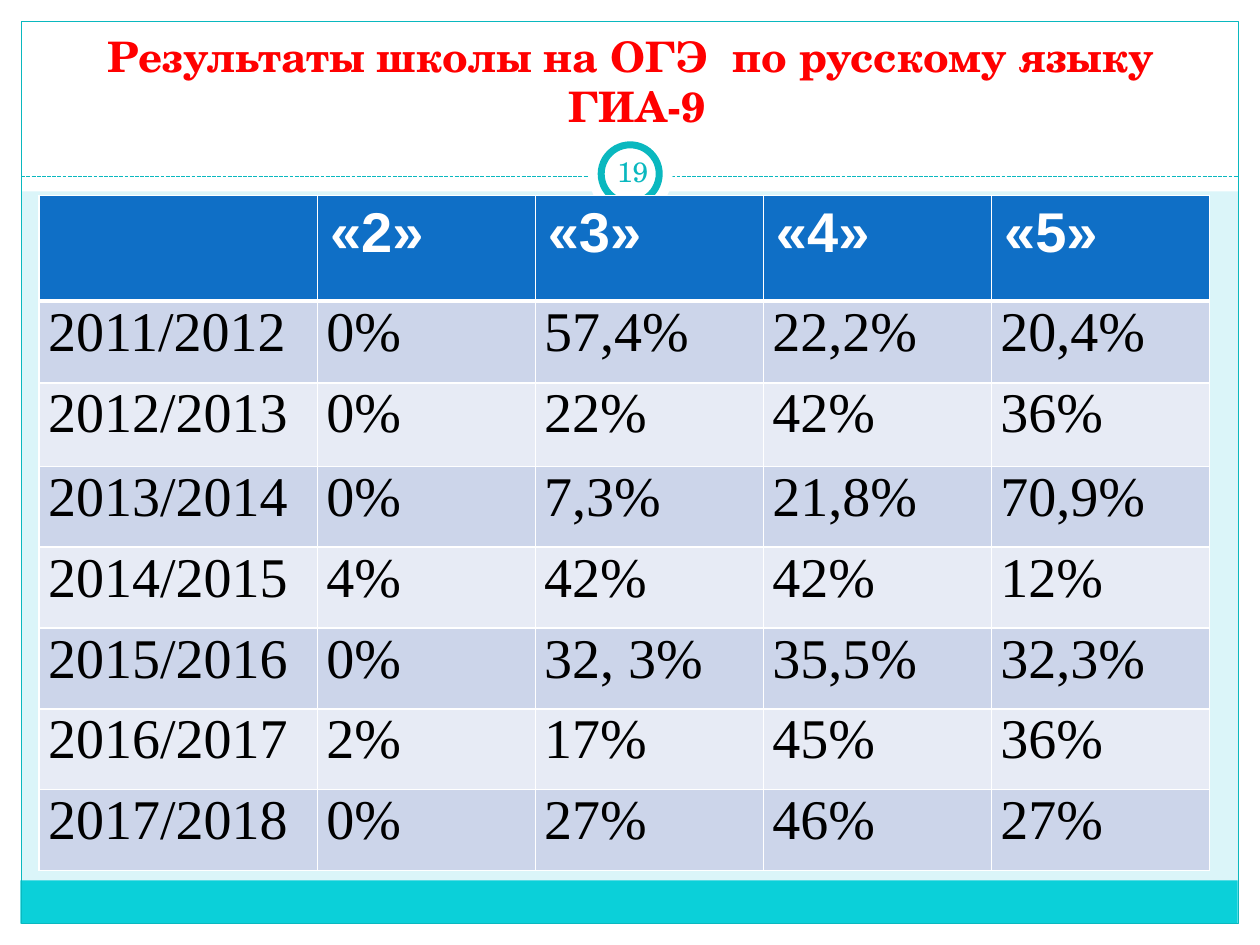
"""Build the slide with the school's Russian language exam results by year."""
from lxml.etree import SubElement
from pptx import Presentation
from pptx.dml.color import RGBColor
from pptx.enum.dml import MSO_LINE
from pptx.enum.shapes import MSO_CONNECTOR, MSO_SHAPE
from pptx.enum.text import MSO_ANCHOR as Anchor, MSO_AUTO_SIZE, PP_ALIGN as Align
from pptx.oxml.ns import qn
from pptx.util import Cm, Pt

WHITE = RGBColor(0xFF, 0xFF, 0xFF)
BLACK = RGBColor(0x00, 0x00, 0x00)
RED = RGBColor(0xFF, 0x00, 0x00)
TEAL = RGBColor(0x0A, 0xB8, 0xBF)
BRIGHT_TEAL = RGBColor(0x0B, 0xD0, 0xD9)
PALE_TEAL = RGBColor(0xDB, 0xF5, 0xF9)
HEADER_BLUE = RGBColor(0x0F, 0x6F, 0xC6)
BANDS = [RGBColor(0xCC, 0xD5, 0xEA), RGBColor(0xE7, 0xEB, 0xF5)]
SERIF = "TeX Gyre Schola"


def add_block(slide, kind, bounds, fill=None, line=None, width=0.75):
    block = slide.shapes.add_shape(kind, *[Cm(value) for value in bounds])
    block.shadow.inherit = False
    if fill is None:
        block.fill.background()
    else:
        block.fill.solid()
        block.fill.fore_color.rgb = fill
    if line is None:
        block.line.fill.background()
    else:
        block.line.color.rgb = line
        block.line.width = Pt(width)


def write(frame, text, font, size, color, bold=False, align=Align.LEFT):
    para = frame.paragraphs[0]
    para.alignment = align
    span = para.add_run()
    span.text = text
    span.font.name = font
    span.font.size = Pt(size)
    span.font.bold = bold
    span.font.color.rgb = color


deck = Presentation()
deck.slide_width, deck.slide_height = Cm(25.4), Cm(19.05)
slide = deck.slides.add_slide(deck.slide_layouts[5])
slide.background.fill.solid()
slide.background.fill.fore_color.rgb = PALE_TEAL

margins = [
    (0, 18.62, 25.4, 0.43),
    (0, 0, 25.4, 3.86),
    (0, 0, 0.43, 19.05),
    (24.97, 0, 0.43, 19.05),
]
for bounds in margins:
    add_block(slide, MSO_SHAPE.RECTANGLE, bounds, fill=WHITE)
add_block(slide, MSO_SHAPE.RECTANGLE, (0.41, 17.75, 24.54, 0.87), fill=BRIGHT_TEAL)
add_block(slide, MSO_SHAPE.RECTANGLE, (0.43, 0.43, 24.54, 18.19), line=TEAL)

divider = slide.shapes.add_connector(
    MSO_CONNECTOR.STRAIGHT, Cm(0.43), Cm(3.56), Cm(24.97), Cm(3.56))
divider.line.color.rgb = TEAL
divider.line.width = Pt(0.75)
divider.line.dash_style = MSO_LINE.SQUARE_DOT
SubElement(divider.element.spPr, qn("a:effectLst"))

add_block(slide, MSO_SHAPE.OVAL, (11.86, 2.67, 1.7, 1.7), fill=WHITE)
add_block(slide, MSO_SHAPE.OVAL, (12.12, 2.92, 1.17, 1.17), fill=WHITE, line=TEAL, width=4)

title = slide.shapes.title
title.left, title.top, title.width, title.height = Cm(0.99), Cm(0.79), Cm(23.7), Cm(1.98)
title.text_frame.auto_size = MSO_AUTO_SIZE.NONE
title.text_frame.word_wrap = True
title.text_frame.vertical_anchor = Anchor.BOTTOM
write(title.text_frame, "Результаты школы на ОГЭ  по русскому языку  ГИА-9",
      font=SERIF, size=24, color=RED, bold=True, align=Align.CENTER)
slide.shapes.element.append(title.element)

results = [
    ["", "«2»", "«3»", "«4»", "«5»"],
    ["2011/2012", "0%", "57,4%", "22,2%", "20,4%"],
    ["2012/2013", "0%", "22%", "42%", "36%"],
    ["2013/2014", "0%", "7,3%", "21,8%", "70,9%"],
    ["2014/2015", "4%", "42%", "42%", "12%"],
    ["2015/2016", "0%", "32, 3%", "35,5%", "32,3%"],
    ["2016/2017", "2%", "17%", "45%", "36%"],
    ["2017/2018", "0%", "27%", "46%", "27%"],
]
column_widths = [5.61, 4.39, 4.6, 4.6, 4.39]
row_heights = [2.13, 1.65, 1.68] + [1.63] * 5
table = slide.shapes.add_table(
    len(results), len(column_widths), Cm(0.79), Cm(3.94),
    Cm(sum(column_widths)), Cm(sum(row_heights))).table
for column, width in zip(table.columns, column_widths):
    column.width = Cm(width)
for row, height in zip(table.rows, row_heights):
    row.height = Cm(height)

for row_index, values in enumerate(results):
    is_header = row_index == 0
    for column_index, value in enumerate(values):
        cell = table.cell(row_index, column_index)
        properties = cell._tc.get_or_add_tcPr()
        for side in ("L", "R", "T", "B"):
            thick = (row_index, side) in [(0, "B"), (1, "T")]
            border = SubElement(properties, qn(f"a:ln{side}"), w=str(Pt(3 if thick else 1)))
            border_fill = SubElement(border, qn("a:solidFill"))
            SubElement(border_fill, qn("a:srgbClr"), val=str(WHITE))
        cell.fill.solid()
        cell.fill.fore_color.rgb = HEADER_BLUE if is_header else BANDS[(row_index - 1) % 2]
        if is_header:
            if value:
                write(cell.text_frame, value, font="Arial", size=32, color=WHITE, bold=True)
        else:
            cell.margin_left = cell.margin_right = Cm(0.18)
            cell.margin_top = cell.margin_bottom = 0
            write(cell.text_frame, value, font="Times New Roman", size=32,
                  color=BLACK, align=Align.JUSTIFY)

number_box = slide.shapes.add_textbox(Cm(12.12), Cm(2.84), Cm(1.27), Cm(1.22))
number_frame = number_box.text_frame
number_frame.word_wrap = True
number_frame.vertical_anchor = Anchor.MIDDLE
number_frame.margin_left = number_frame.margin_right = Cm(0.13)
number_frame.margin_top = number_frame.margin_bottom = Cm(0.13)
write(number_frame, "19", font=SERIF, size=16, color=TEAL, align=Align.CENTER)

deck.save("out.pptx")
